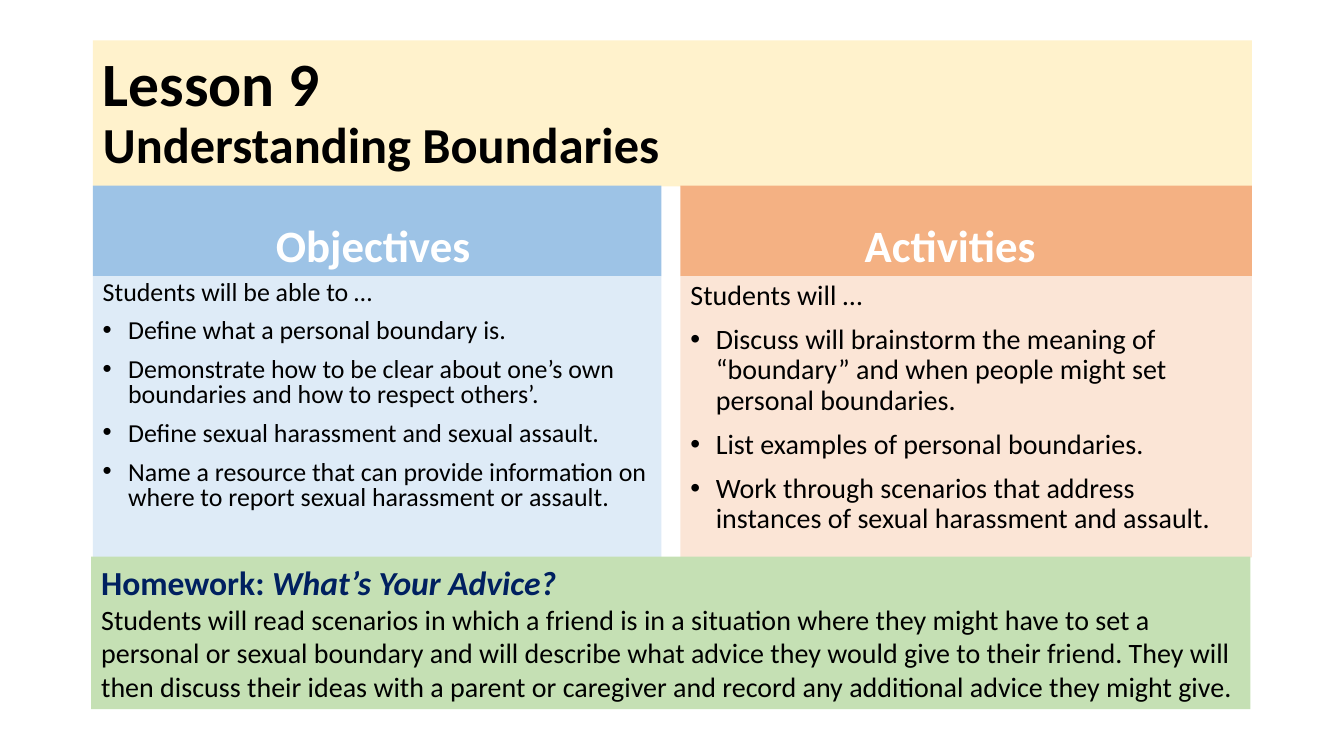
from lxml.etree import SubElement as Sub
from pptx import Presentation
from pptx.dml.color import RGBColor as Rgb
from pptx.enum.text import MSO_ANCHOR as Anchor, MSO_AUTO_SIZE as Auto, PP_ALIGN as Align
from pptx.oxml.ns import qn
from pptx.util import Cm, Pt

HUES = {
    "cream": "FFF2CC", "blue": "9DC3E6", "pale blue": "DEEBF7",
    "orange": "F4B183", "peach": "FBE5D6", "green": "C5E0B4",
    "navy": "002060", "black": "000000", "white": "FFFFFF",
}
LEFT, WIDE = 2.34, 29.21
TOP, HEAD, BODY = 4.68, 2.28, 7.09


def panel(shape, place, hue, anchor=Anchor.TOP):
    """Place and fill a shape, and return its text frame."""
    shape.left, shape.top, shape.width, shape.height = [Cm(n) for n in place]
    shape.fill.solid()
    shape.fill.fore_color.rgb = Rgb.from_string(HUES[hue])
    frame = shape.text_frame
    frame.word_wrap = True
    frame.auto_size = Auto.NONE
    frame.vertical_anchor = anchor
    return frame


def write(para, text, size, hue="black", **style):
    run = para.add_run()
    run.text = text
    run.font.color.rgb = Rgb.from_string(HUES[hue])
    for key, value in {"name": "Calibri", "size": Pt(size), **style}.items():
        setattr(run.font, key, value)


deck = Presentation()
deck.slide_width, deck.slide_height = Cm(33.87), Cm(19.05)
slide = deck.slides.add_slide(deck.slide_layouts[5])
shapes = slide.shapes

# Title
frame = panel(shapes.title, (LEFT, 1.02, WIDE, 3.68), "cream", Anchor.MIDDLE)
para = frame.paragraphs[0]
para.alignment = Align.LEFT
para.line_spacing = 0.9
write(para, "Lesson 9", 44, bold=True)
para.add_line_break()
write(para, "Understanding Boundaries", 36, bold=True)

# Two columns: heading, left, width, right inset, colours, text size, spacing, lines
columns = [
    ("Objectives", LEFT, 14.33, 0.45, "blue", "pale blue", 18.5, 0.8, [
        "Students will be able to …",
        "Define what a personal boundary is.",
        "Demonstrate how to be clear about one’s own boundaries and how to respect others’.",
        "Define sexual harassment and sexual assault.",
        "Name a resource that can provide information on where to report "
        "sexual harassment or assault.",
    ]),
    ("Activities", 17.15, 14.4, 1.05, "orange", "peach", 20, 0.9, [
        "Students will …",
        "Discuss will brainstorm the meaning of “boundary” and when people "
        "might set personal boundaries.",
        "List examples of personal boundaries.",
        "Work through scenarios that address instances of sexual harassment and assault.",
    ]),
]
for name, left, width, inset, dark, light, size, space, lines in columns:
    box = shapes.add_textbox(0, 0, 0, 0)
    frame = panel(box, (left, TOP, width, HEAD), dark, Anchor.BOTTOM)
    frame.margin_right = Cm(inset)
    para = frame.paragraphs[0]
    para.alignment = Align.CENTER
    write(para, name, 32, "white", bold=True)

    box = shapes.add_textbox(0, 0, 0, 0)
    frame = panel(box, (left, TOP + HEAD, width, BODY), light)
    for i, line in enumerate(lines):
        para = frame.add_paragraph() if i else frame.paragraphs[0]
        para.line_spacing = space
        if i:
            para.space_before = Pt(10)
            props = para._p.get_or_add_pPr()
            props.set("marL", str(Cm(0.64)))
            props.set("indent", str(-Cm(0.64)))
            Sub(props, qn("a:buFont"), typeface="Arial")
            Sub(props, qn("a:buChar"), char="•")
        write(para, line, size)

# Homework
box = shapes.add_textbox(0, 0, 0, 0)
frame = panel(box, (2.3, 14.03, WIDE, 3.84), "green")
para = frame.paragraphs[0]
write(para, "Homework: ", 24, "navy", bold=True)
write(para, "What’s Your Advice?", 24, "navy", bold=True, italic=True)
write(
    frame.add_paragraph(),
    "Students will read scenarios in which a friend is in a situation where they might "
    "have to set a personal or sexual boundary and will describe what advice they would "
    "give to their friend. They will then discuss their ideas with a parent or caregiver "
    "and record any additional advice they might give.",
    20,
)

deck.save("out.pptx")
